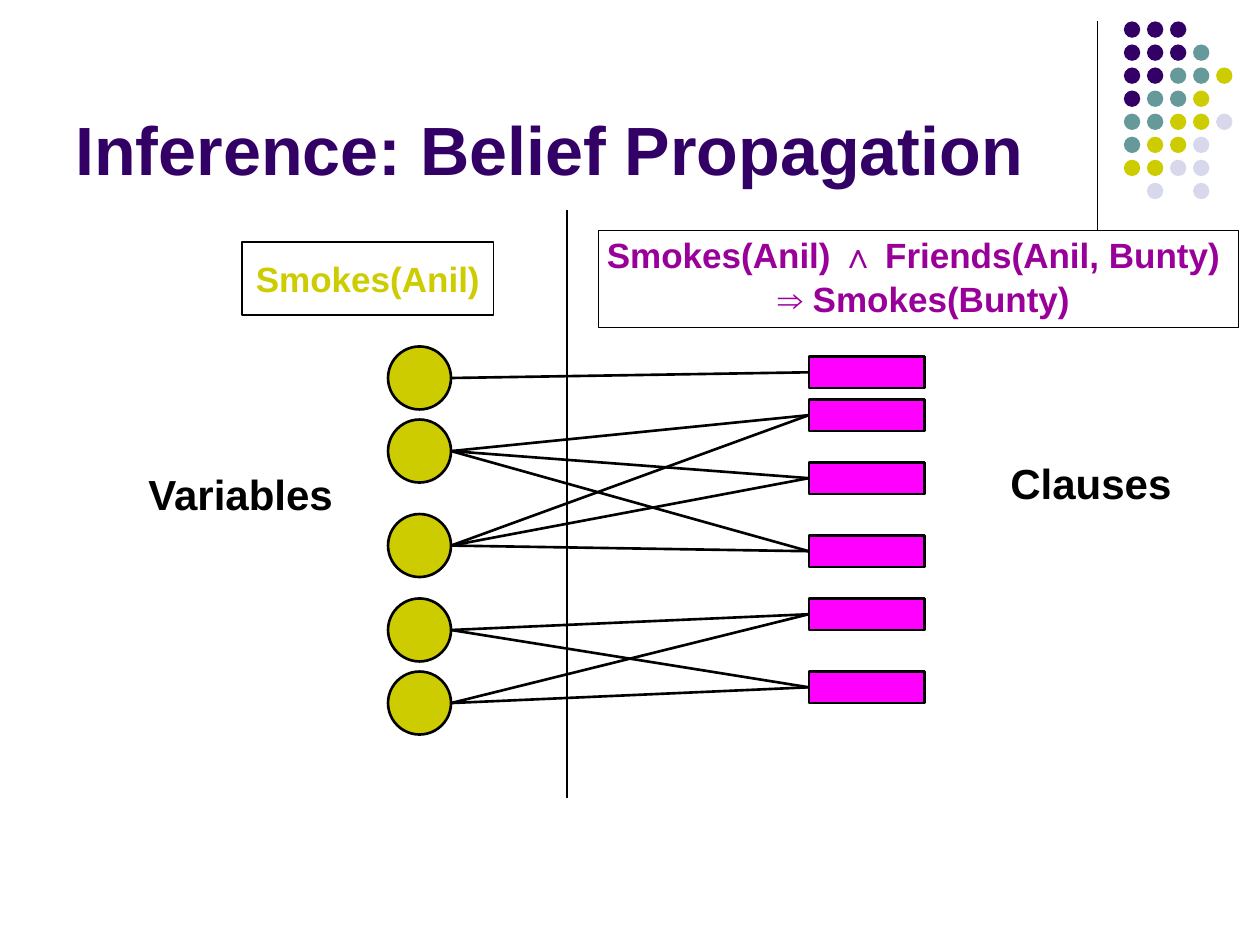
from dataclasses import dataclass

from lxml.etree import SubElement
from pptx import Presentation
from pptx.dml.color import RGBColor
from pptx.enum.shapes import MSO_CONNECTOR as Connector, MSO_SHAPE as Shape
from pptx.enum.text import MSO_ANCHOR as Anchor, PP_ALIGN as Align
from pptx.oxml.ns import qn
from pptx.util import Inches, Pt


@dataclass(frozen=True)
class Theme:
    font: str = "Arial"
    title: str = "330066"
    ink: str = "000000"
    variable: str = "CCCC00"
    clause: str = "FF00FF"
    formula: str = "990099"
    teal: str = "669999"
    pale: str = "D8D8EC"
    title_size: float = 39
    label_size: float = 24
    formula_size: float = 20
    thin: float = 0.75
    thick: float = 1.5


THEME = Theme()

# One letter per dot of the corner ornament
DOT_ROWS = ["PPP", "PPPT", "PPTTY", "PTTY", "TTYYL", "TYYL", "YYLL", " L L"]
DOT_COLOURS = {"P": THEME.title, "T": THEME.teal, "Y": THEME.variable, "L": THEME.pale}

VARIABLE_TOPS = [2.75, 3.33, 4.08, 4.75, 5.33]
CLAUSE_TOPS = [2.83, 3.17, 3.67, 4.25, 4.75, 5.33]
# Clauses in which each variable appears
MEMBERSHIP = [[0], [1, 2, 3], [1, 2, 3], [4, 5], [4, 5]]


def add_figure(shapes, kind, box, fill=None, line_width=None):
    figure = shapes.add_shape(kind, *map(Inches, box))
    figure.shadow.inherit = False
    if fill:
        figure.fill.solid()
        figure.fill.fore_color.rgb = RGBColor.from_string(fill)
    else:
        figure.fill.background()
    if line_width:
        figure.line.color.rgb = RGBColor.from_string(THEME.ink)
        figure.line.width = Pt(line_width)
    else:
        figure.line.fill.background()
    return figure


def add_line(shapes, start, end, width):
    line = shapes.add_connector(Connector.STRAIGHT, *map(Inches, (*start, *end)))
    line.line.color.rgb = RGBColor.from_string(THEME.ink)
    line.line.width = Pt(width)
    SubElement(line._element.spPr, qn("a:effectLst"))
    return line


def write(paragraph, text, size, colour, align=Align.LEFT):
    paragraph.alignment = align
    run = paragraph.add_run()
    run.text = text
    run.font.name = THEME.font
    run.font.size = Pt(size)
    run.font.bold = True
    run.font.color.rgb = RGBColor.from_string(colour)


def add_label(shapes, box, text, size, colour, anchor=Anchor.TOP):
    frame = shapes.add_textbox(*map(Inches, box)).text_frame
    frame.word_wrap = True
    frame.vertical_anchor = anchor
    write(frame.paragraphs[0], text, size, colour)


def add_formula(shapes, box, lines, colour):
    frame = add_figure(shapes, Shape.RECTANGLE, box, line_width=THEME.thin).text_frame
    frame.word_wrap = False
    frame.vertical_anchor = Anchor.MIDDLE
    for number, text in enumerate(lines):
        paragraph = frame.add_paragraph() if number else frame.paragraphs[0]
        write(paragraph, text, THEME.formula_size, colour, Align.CENTER)
    return frame.paragraphs


def add_dots(shapes):
    dots = shapes.add_group_shape().shapes
    pitch, size = 0.183, 0.13
    for row, letters in enumerate(DOT_ROWS):
        for column, letter in enumerate(letters):
            if letter in DOT_COLOURS:
                box = (8.92 + column * pitch, 0.17 + row * pitch, size, size)
                add_figure(dots, Shape.OVAL, box, DOT_COLOURS[letter])


def add_factor_graph(shapes):
    left, diameter = 3.08, 0.5
    for top in VARIABLE_TOPS:
        add_figure(shapes, Shape.OVAL, (left, top, diameter, diameter),
                   THEME.variable, THEME.thick)
    clauses = [add_figure(shapes, Shape.RECTANGLE, (6.42, top, 0.92, 0.25),
                          THEME.clause, THEME.thick) for top in CLAUSE_TOPS]
    for top, members in zip(VARIABLE_TOPS, MEMBERSHIP):
        start = (left + diameter, top + diameter / 2)
        for member in members:
            edge = add_line(shapes, start, (6.42, CLAUSE_TOPS[member]), THEME.thick)
            edge.end_connect(clauses[member], 1)


def main():
    deck = Presentation()
    deck.slide_width, deck.slide_height = Inches(10), Inches(7.5)
    shapes = deck.slides.add_slide(deck.slide_layouts[6]).shapes

    # Corner ornament and title
    add_line(shapes, (8.71, 0.17), (8.71, 1.83), THEME.thin)
    add_dots(shapes)
    add_label(shapes, (0.5, 0.13, 8.25, 1.42), "Inference: Belief Propagation",
              THEME.title_size, THEME.title, Anchor.BOTTOM)

    # Variables linked to the clauses that mention them
    add_factor_graph(shapes)
    add_label(shapes, (1.08, 3.67, 1.67, 0.5), "Variables", THEME.label_size, THEME.ink)
    add_label(shapes, (7.92, 3.58, 1.75, 0.5), "Clauses", THEME.label_size, THEME.ink)

    # Example of each side, with the divider between them
    add_formula(shapes, (1.92, 1.92, 2, 0.58), ["Smokes(Anil)"], THEME.variable)
    rule = add_formula(shapes, (4.75, 1.83, 5.08, 0.77),
                       ["Smokes(Anil) ∧ Friends(Anil, Bunty) ", "⇒ Smokes(Bunty) "],
                       THEME.formula)
    for paragraph in rule:
        paragraph.line_spacing = 0.9
        paragraph.space_before = Pt(4)
    rule[1]._p.get_or_add_pPr().set("marL", str(Inches(0.16)))
    add_line(shapes, (4.5, 1.67), (4.5, 6.33), THEME.thin)

    deck.save("out.pptx")


if __name__ == "__main__":
    main()
